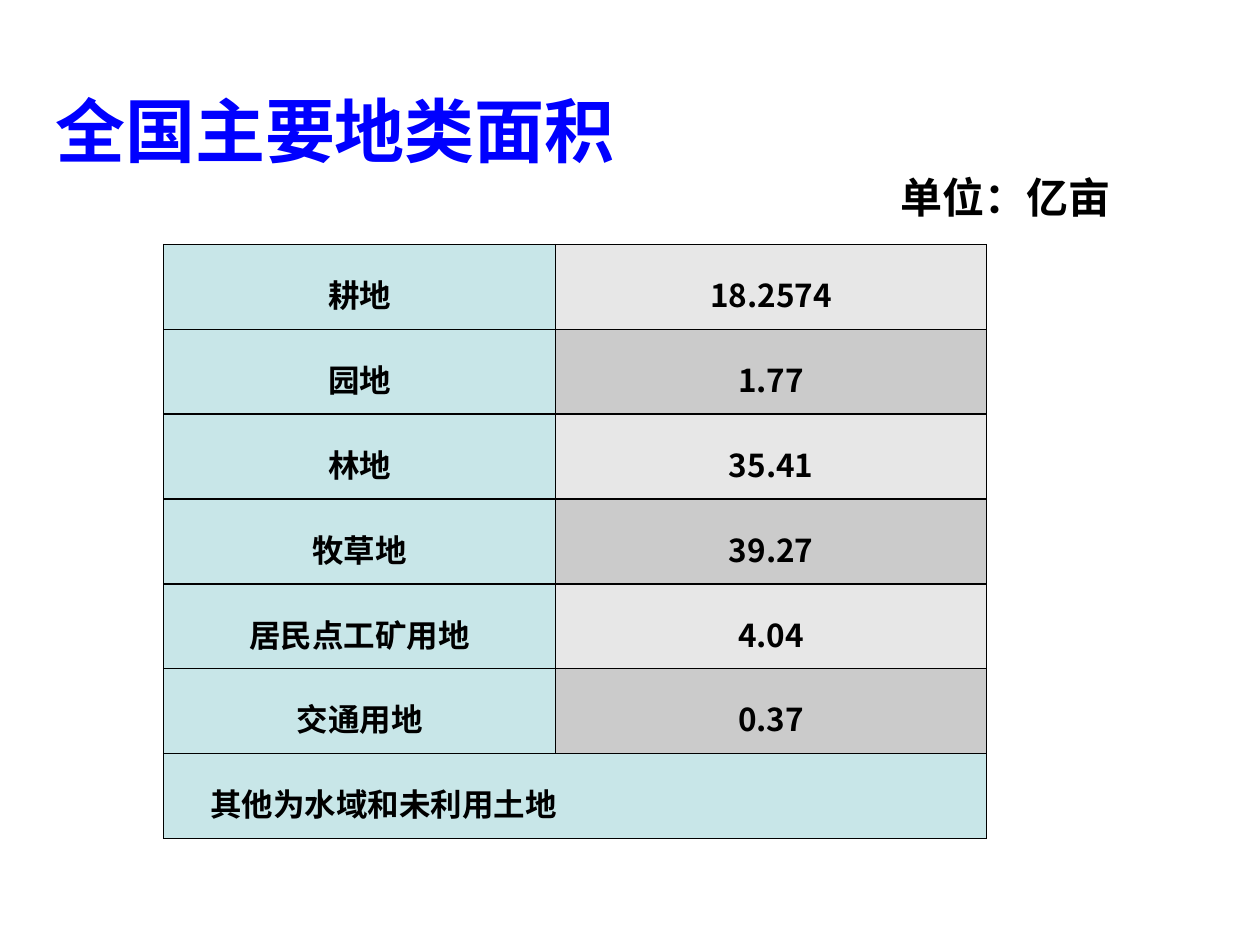
from typing import NamedTuple

from lxml import etree
from pptx import Presentation, util as u
from pptx.dml.color import RGBColor
from pptx.enum import text
from pptx.oxml.ns import qn

BLUE = RGBColor(0x00, 0x00, 0xFF)
BLACK = RGBColor(0x00, 0x00, 0x00)
TEAL = RGBColor(0x72, 0xBF, 0xC5)
GREYS = (RGBColor(0xE7, 0xE7, 0xE7), RGBColor(0xCB, 0xCB, 0xCB))
TEAL_OPACITY = 39
CJK_FONT = "Noto Sans CJK SC"


class LandUse(NamedTuple):
    name: str
    area: str


LAND_USES = [
    LandUse("耕地", "18.2574"),
    LandUse("园地", "1.77"),
    LandUse("林地", "35.41"),
    LandUse("牧草地", "39.27"),
    LandUse("居民点工矿用地", "4.04"),
    LandUse("交通用地", "0.37"),
]
ROW_HEIGHT = u.Cm(1.71)
COL_WIDTHS = (u.Cm(7.9), u.Cm(8.69))


def add_run(p, content: str, size: int, color: RGBColor, font: str = CJK_FONT) -> None:
    r = p.add_run()
    r.text = content
    r.font.size = u.Pt(size)
    r.font.bold = True
    r.font.name = font
    r.font.color.rgb = color
    ea = etree.Element(qn("a:ea"), typeface=CJK_FONT)
    r.font._element.find(qn("a:latin")).addnext(ea)


def add_borders(cell) -> None:
    tc_pr = cell._tc.get_or_add_tcPr()
    for side in ("a:lnL", "a:lnR", "a:lnT", "a:lnB"):
        ln = etree.SubElement(tc_pr, qn(side), w=str(u.Pt(1)))
        fill = etree.SubElement(ln, qn("a:solidFill"))
        etree.SubElement(fill, qn("a:srgbClr"), val=str(BLACK))


def fill_cell(cell, color: RGBColor, opacity: int = 100) -> None:
    cell.fill.solid()
    cell.fill.fore_color.rgb = color
    if opacity < 100:
        clr = cell._tc.tcPr.find(qn("a:solidFill")).find(qn("a:srgbClr"))
        etree.SubElement(clr, qn("a:alpha"), val=str(opacity * 1000))


def write_cell(cell, content: str, align=text.PP_ALIGN.CENTER) -> None:
    cell.vertical_anchor = text.MSO_ANCHOR.MIDDLE
    cell.margin_top = u.Cm(0.41)
    p = cell.text_frame.paragraphs[0]
    p.alignment = align
    add_run(p, content, 18, BLACK)


def add_title(s) -> None:
    sp = s.shapes.title
    sp.left, sp.top, sp.width, sp.height = u.Cm(0.86), u.Cm(1.02), u.Cm(22.86), u.Cm(3.18)
    tf = sp.text_frame
    tf.vertical_anchor = text.MSO_ANCHOR.MIDDLE
    p = tf.paragraphs[0]
    p.alignment = text.PP_ALIGN.LEFT
    add_run(p, "全国主要地类面积", 40, BLUE, "Calibri")


def add_unit_label(s) -> None:
    sp = s.shapes.add_textbox(u.Cm(17.91), u.Cm(3.33), u.Cm(4.8), u.Cm(1.3))
    tf = sp.text_frame
    tf.word_wrap = False
    tf.auto_size = text.MSO_AUTO_SIZE.SHAPE_TO_FIT_TEXT
    add_run(tf.paragraphs[0], "单位：亿亩", 24, BLACK)


def add_area_table(s) -> None:
    n_rows = len(LAND_USES) + 1
    table = s.shapes.add_table(n_rows, 2, u.Cm(3.3), u.Cm(4.93),
                               sum(COL_WIDTHS), ROW_HEIGHT * n_rows).table
    table.first_row = table.horz_banding = False
    for col, width in zip(table.columns, COL_WIDTHS):
        col.width = width
    for row in table.rows:
        row.height = ROW_HEIGHT
    for cell in table.iter_cells():
        add_borders(cell)

    for i, land_use in enumerate(LAND_USES):
        name, area = table.cell(i, 0), table.cell(i, 1)
        write_cell(name, land_use.name)
        fill_cell(name, TEAL, TEAL_OPACITY)
        write_cell(area, land_use.area)
        fill_cell(area, GREYS[i % 2])

    note = table.cell(n_rows - 1, 0)
    note.merge(table.cell(n_rows - 1, 1))
    write_cell(note, "其他为水域和未利用土地", text.PP_ALIGN.LEFT)
    note.margin_left = u.Cm(0.94)
    fill_cell(note, TEAL, TEAL_OPACITY)


def main() -> None:
    prs = Presentation()
    prs.slide_width, prs.slide_height = u.Cm(25.4), u.Cm(19.05)
    s = prs.slides.add_slide(prs.slide_layouts[5])
    add_title(s)
    add_area_table(s)
    add_unit_label(s)
    prs.save("out.pptx")


if __name__ == "__main__":
    main()
